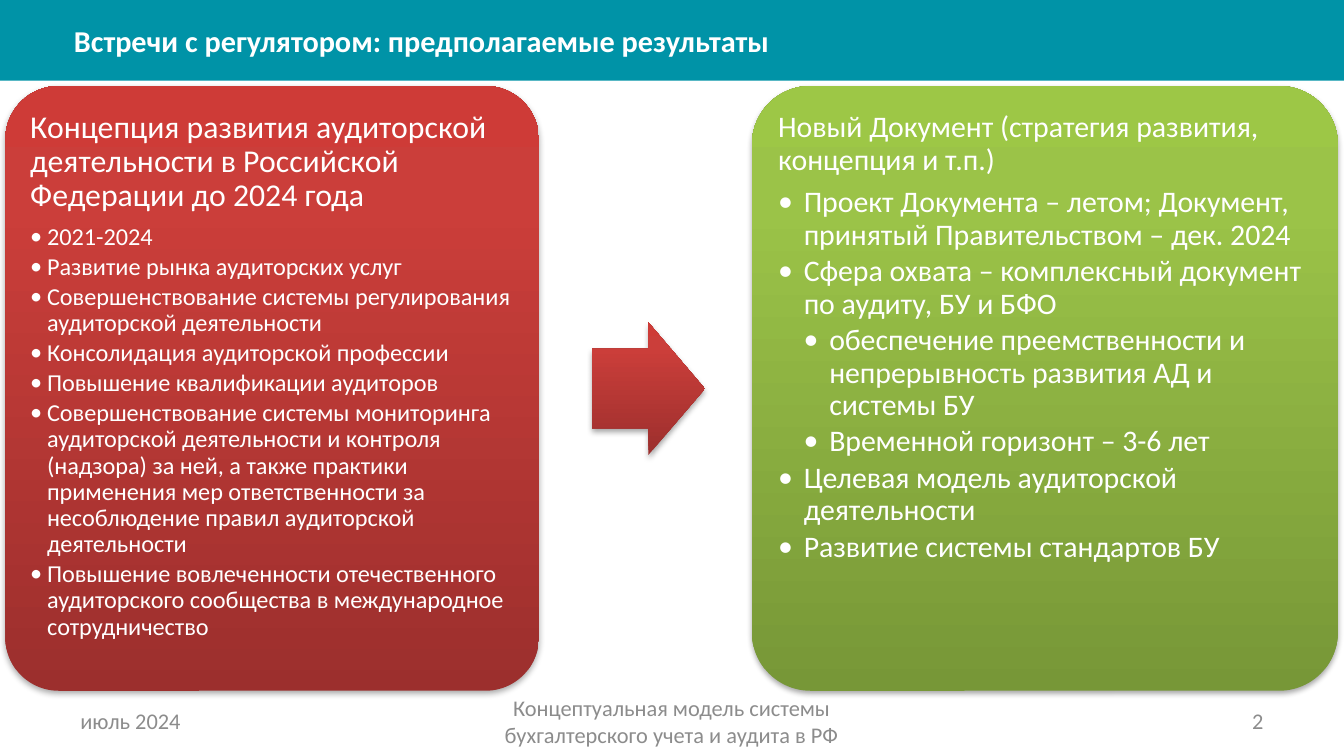
from pptx import Presentation
from pptx.dml.color import RGBColor
from pptx.enum.shapes import MSO_SHAPE
from pptx.enum.text import MSO_ANCHOR, MSO_AUTO_SIZE, PP_ALIGN
from pptx.oxml import parse_xml
from pptx.oxml.ns import nsdecls, qn
from pptx.util import Pt

PX = 4572  # 200 px to the inch
RECT, ROUND, ARROW = MSO_SHAPE.RECTANGLE, MSO_SHAPE.ROUNDED_RECTANGLE, MSO_SHAPE.RIGHT_ARROW
TOP, MIDDLE = MSO_ANCHOR.TOP, MSO_ANCHOR.MIDDLE
LEFT, CENTER, RIGHT = PP_ALIGN.LEFT, PP_ALIGN.CENTER, PP_ALIGN.RIGHT

FONT = "Calibri"
CORNER = 0.1  # corner radius as a share of the shorter side
TEAL = RGBColor(0x00, 0x93, 0xA7)
WHITE = RGBColor(0xFF, 0xFF, 0xFF)
GRAY = RGBColor(0x8C, 0x8C, 0x8C)
RED_GRADIENT = {0: RGBColor(0x9C, 0x2F, 0x2D), 80: RGBColor(0xCB, 0x3E, 0x3A),
                100: RGBColor(0xCE, 0x3B, 0x37)}
GREEN_GRADIENT = {0: RGBColor(0x77, 0x97, 0x37), 80: RGBColor(0x9B, 0xC3, 0x48),
                  100: RGBColor(0x9D, 0xC7, 0x46)}

TITLE = "Встречи с регулятором: предполагаемые результаты"
CONCEPT_HEAD = "Концепция развития аудиторской деятельности в Российской Федерации до 2024 года"
CONCEPT_ITEMS = [
    (1, "2021-2024"),
    (1, "Развитие рынка аудиторских услуг"),
    (1, "Совершенствование системы регулирования аудиторской деятельности"),
    (1, "Консолидация аудиторской профессии"),
    (1, "Повышение квалификации аудиторов"),
    (1, "Совершенствование системы мониторинга аудиторской деятельности и контроля (надзора) "
        "за ней, а также практики применения мер ответственности за несоблюдение правил "
        "аудиторской деятельности"),
    (1, "Повышение вовлеченности отечественного аудиторского сообщества в международное "
        "сотрудничество"),
]
DOCUMENT_HEAD = "Новый Документ (стратегия развития, концепция и т.п.)"
DOCUMENT_ITEMS = [
    (1, "Проект Документа – летом; Документ, принятый Правительством – дек. 2024"),
    (1, "Сфера охвата – комплексный документ по аудиту, БУ и БФО"),
    (2, "обеспечение преемственности и непрерывность развития АД и системы БУ"),
    (2, "Временной горизонт – 3-6 лет"),
    (1, "Целевая модель аудиторской деятельности"),
    (1, "Развитие системы стандартов БУ"),
]
FOOTERS = [
    (100, 467, "июль 2024", LEFT),
    (683, 633, "Концептуальная модель системы бухгалтерского учета и аудита в РФ", CENTER),
    (1433, 467, "2", RIGHT),
]


def px(*lengths):
    return [n * PX for n in lengths]


def write(p, text, size, color=WHITE, bold=False, align=LEFT, line=None, after=None,
          level=0, indent=0):
    """Fill a paragraph; a level above 0 makes it a bullet."""
    p.alignment = align
    p.level = level
    if level:
        pPr = p._p.get_or_add_pPr()
        pPr.set("marL", str(level * indent * PX))
        pPr.set("indent", str(-indent * PX))
        pPr.append(parse_xml(f'<a:buFont {nsdecls("a")} typeface="{FONT}"/>'))
        pPr.append(parse_xml(f'<a:buChar {nsdecls("a")} char="•"/>'))
    if line:
        p.line_spacing = line
    if after:
        p.space_after = Pt(after)
    r = p.add_run()
    r.text = text
    r.font.name, r.font.size, r.font.bold = FONT, Pt(size), bold
    r.font.color.rgb = color


def add_text_box(s, box, anchor, inset=None):
    tf = s.shapes.add_textbox(*px(*box)).text_frame
    tf.word_wrap = True
    tf.vertical_anchor = anchor
    if inset is not None:
        tf.margin_left = tf.margin_top = tf.margin_right = tf.margin_bottom = inset * PX
    return tf


def add_gradient_shape(s, kind, box, gradient, adjustments):
    """Add a borderless shape with an upward gradient and a soft shadow below it."""
    sp = s.shapes.add_shape(kind, *px(*box))
    for i, value in enumerate(adjustments):
        sp.adjustments[i] = value
    sp.line.fill.background()
    stops = "".join(f'<a:gs pos="{pos * 1000}"><a:srgbClr val="{color}"/></a:gs>'
                    for pos, color in gradient.items())
    ln = sp._element.spPr.find(qn("a:ln"))
    ln.addprevious(parse_xml(
        f'<a:gradFill {nsdecls("a")} rotWithShape="1"><a:gsLst>{stops}</a:gsLst>'
        '<a:lin ang="16200000" scaled="0"/></a:gradFill>'))
    ln.addnext(parse_xml(
        f'<a:effectLst {nsdecls("a")}><a:outerShdw blurRad="40000" dist="23000" dir="5400000" '
        'rotWithShape="0"><a:srgbClr val="000000"><a:alpha val="35000"/></a:srgbClr>'
        '</a:outerShdw></a:effectLst>'))


def add_header(s, box):
    x, y, w, h = box
    bar = s.shapes.add_shape(RECT, *px(*box))
    bar.shadow.inherit = False
    bar.fill.solid()
    bar.fill.fore_color.rgb = TEAL
    bar.line.fill.background()
    title = s.shapes.title
    title.left, title.top, title.width, title.height = px(x + 90, y + 23, w - 200, 75)
    bar._element.addnext(title._element)  # title in front of the bar
    tf = title.text_frame
    tf.auto_size = MSO_AUTO_SIZE.NONE
    tf.vertical_anchor = MIDDLE
    write(tf.paragraphs[0], TITLE, 16.2, bold=True)


def add_panel(s, box, gradient, head, head_size, items, item_size, indent):
    x, y, w, h = box
    add_gradient_shape(s, ROUND, box, gradient, [CORNER])
    pad = round(0.29 * CORNER * min(w, h))  # keeps the text clear of the round corners
    tf = add_text_box(s, (x + pad, y + pad, w - 2 * pad, h - 2 * pad), TOP, inset=14)
    write(tf.paragraphs[0], head, head_size, line=0.9, after=0.35 * head_size)
    for level, text in items:
        write(tf.add_paragraph(), text, item_size, line=0.9, after=0.15 * item_size,
              level=level, indent=indent)


def add_footer(s, box):
    x, y, w, h = box
    for left, width, text, align in FOOTERS:
        tf = add_text_box(s, (x + left, y, width, h), MIDDLE)
        write(tf.paragraphs[0], text, 12, color=GRAY, align=align)


def main():
    prs = Presentation()
    prs.slide_width, prs.slide_height = px(2000, 1125)
    s = prs.slides.add_slide(prs.slide_layouts[5])
    add_header(s, (0, 0, 2000, 120))
    add_panel(s, (8, 128, 794, 900), RED_GRADIENT, CONCEPT_HEAD, 17, CONCEPT_ITEMS, 13, 25)
    add_gradient_shape(s, ARROW, (881, 480, 168, 197), RED_GRADIENT, [0.6, 0.5])
    add_panel(s, (1119, 128, 872, 900), GREEN_GRADIENT, DOCUMENT_HEAD, 16, DOCUMENT_ITEMS, 16, 38)
    add_footer(s, (0, 1043, 2000, 60))
    prs.save("out.pptx")


if __name__ == "__main__":
    main()
